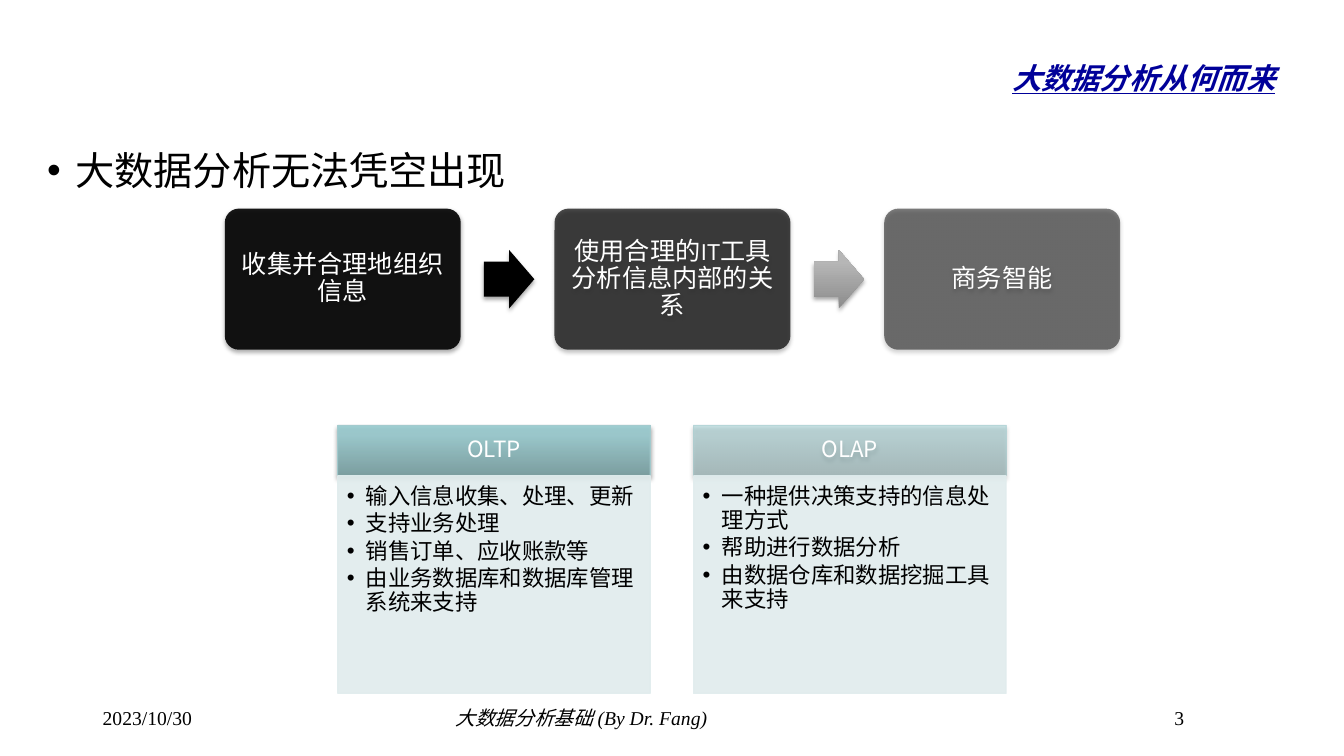
import pptx
import pptx.util
import pptx.dml.color
import pptx.enum.shapes
import pptx.enum.text
import pptx.oxml
import pptx.oxml.ns

Inches, Pt = pptx.util.Inches, pptx.util.Pt
RGB = pptx.dml.color.RGBColor
KIND = pptx.enum.shapes.MSO_SHAPE
ALIGN = pptx.enum.text.PP_ALIGN
ANCHOR = pptx.enum.text.MSO_ANCHOR
qn = pptx.oxml.ns.qn
NS = pptx.oxml.ns.nsdecls("a")

BLACK = RGB(0, 0, 0)
WHITE = RGB(255, 255, 255)
NAVY = RGB(0, 0, 0x99)
EDGE = RGB(0xA4, 0xCB, 0xCE)
PALE = RGB(0xE0, 0xEC, 0xED)
TEAL = [(0, "769C9E"), (80, "99CACE"), (100, "98CCD0")]
GRAY = [(0, "8C8C8C"), (80, "B6B6B6"), (100, "B7B7B7")]


class Page:
    """Holds the fonts and the slide being built."""
    serif, sans, label = "Times New Roman", "Noto Sans CJK SC", "Karla"

    def __init__(self, deck):
        self.slide = deck.slides.add_slide(deck.slide_layouts[5])

    def place(self, shape, box):
        shape.left, shape.top, shape.width, shape.height = map(Inches, box)

    def run(self, para, text, size, font, color, italic=False):
        run = para.add_run()
        run.text = text
        run.font.size, run.font.name = Pt(size), font
        run.font.color.rgb = color
        run.font.italic = italic
        east = pptx.oxml.parse_xml(f'<a:ea {NS} typeface="{self.sans}"/>')
        run.font._element.find(qn("a:latin")).addnext(east)
        return run

    def bullet(self, para, indent):
        props = para._p.get_or_add_pPr()
        props.set("marL", str(Inches(indent)))
        props.set("indent", str(-Inches(indent)))
        props.append(pptx.oxml.parse_xml(f'<a:buFont {NS} typeface="Arial"/>'))
        props.append(pptx.oxml.parse_xml(f'<a:buChar {NS} char="•"/>'))

    def inset(self, frame, left, top, right, bottom):
        frame.margin_left, frame.margin_top = Inches(left), Inches(top)
        frame.margin_right, frame.margin_bottom = Inches(right), Inches(bottom)

    def title(self, text, box):
        shape = self.slide.shapes.title
        self.place(shape, box)
        frame = shape.text_frame
        frame.vertical_anchor = ANCHOR.MIDDLE
        para = frame.paragraphs[0]
        para.alignment = ALIGN.RIGHT
        font = self.run(para, text, 36, self.serif, NAVY, True).font
        font.bold = font.underline = True
        font._element.set("baseline", "-25000")

    def text(self, text, box, size, italic=False, bullet=False):
        frame = self.slide.shapes.add_textbox(*map(Inches, box)).text_frame
        frame.word_wrap = True
        para = frame.paragraphs[0]
        if bullet:
            self.bullet(para, 0.28)
            para.line_spacing = 1.2
        self.run(para, text, size, self.serif, BLACK, italic)

    def fade(self, fill, alpha):
        for color in fill.iter(qn("a:srgbClr")):
            color.append(pptx.oxml.parse_xml(
                f'<a:alpha {NS} val="{alpha * 1000}"/>'))

    def shape(self, kind, box, fill, alpha=100, line=None, shadow=True):
        shape = self.slide.shapes.add_shape(kind, *map(Inches, box))
        if isinstance(fill, list):
            shape.fill.gradient()
            shape.fill.gradient_angle = 90
            stops = shape._element.spPr.find(".//" + qn("a:gsLst"))
            for stop in list(stops):
                stops.remove(stop)
            for pos, color in fill:
                stops.append(pptx.oxml.parse_xml(
                    f'<a:gs {NS} pos="{pos * 1000}">'
                    f'<a:srgbClr val="{color}"/></a:gs>'))
        else:
            shape.fill.solid()
            shape.fill.fore_color.rgb = fill
        if line is None:
            shape.line.fill.background()
        else:
            shape.line.color.rgb = line
            shape.line.width = Pt(0.75)
        if alpha < 100:
            self.fade(shape._element.spPr, alpha)
        shape.shadow.inherit = False
        if shadow:
            shape._element.spPr.find(qn("a:effectLst")).append(
                pptx.oxml.parse_xml(
                    f'<a:outerShdw {NS} blurRad="{Pt(3.1)}" dist="{Pt(1.8)}" '
                    'dir="5400000" rotWithShape="0"><a:srgbClr val="000000">'
                    '<a:alpha val="35000"/></a:srgbClr></a:outerShdw>'))
        shape.text_frame.word_wrap = True
        return shape

    def caption(self, shape, text, size, font, inset):
        frame = shape.text_frame
        frame.vertical_anchor = ANCHOR.MIDDLE
        self.inset(frame, *inset)
        para = frame.paragraphs[0]
        para.alignment, para.line_spacing = ALIGN.CENTER, 0.9
        self.run(para, text, size, font, WHITE)

    def step(self, left, text, alpha):
        box = self.shape(KIND.ROUNDED_RECTANGLE, (left, 2.07, 2.34, 1.4),
                         BLACK, alpha)
        box.adjustments[0] = 0.1
        self.caption(box, text, 18, self.label, [0.07] * 4)

    def arrow(self, left, fill):
        arrow = self.shape(KIND.RIGHT_ARROW, (left, 2.48, 0.5, 0.58), fill)
        arrow.adjustments[0], arrow.adjustments[1] = 0.6, 0.5

    def panel(self, left, head, items, alpha):
        top = self.shape(KIND.RECTANGLE, (left, 4.22, 3.1, 0.5),
                         TEAL, alpha, EDGE)
        self.caption(top, head, 16, self.sans, (0.12, 0.07, 0.12, 0.07))
        body = self.shape(KIND.RECTANGLE, (left, 4.72, 3.1, 2.16),
                          PALE, 90, PALE, shadow=False)
        frame = body.text_frame
        frame.vertical_anchor = ANCHOR.TOP
        self.inset(frame, 0.09, 0.09, 0.12, 0.14)
        for i, item in enumerate(items):
            para = frame.add_paragraph() if i else frame.paragraphs[0]
            self.bullet(para, 0.19)
            para.alignment, para.line_spacing = ALIGN.LEFT, 0.9
            para.space_after = Pt(2.4)
            self.run(para, item, 16, self.sans, BLACK)


def main():
    deck = pptx.Presentation()
    deck.slide_width, deck.slide_height = Inches(13.33), Inches(7.5)
    page = Page(deck)

    # Title and lead line
    page.title("大数据分析从何而来", (1.94, 0.05, 10.81, 1.1))
    page.text("大数据分析无法凭空出现", (0.37, 1.31, 12.6, 0.7), 28, bullet=True)

    # Footer
    page.text("3", (11.55, 6.95, 0.87, 0.4), 14)
    page.text("大数据分析基础 (By Dr. Fang)", (4.42, 6.95, 6.42, 0.4), 14,
              italic=True)
    page.text("2023/10/30", (0.92, 6.95, 3, 0.4), 14)

    # Comparison panels
    panels = [
        ("OLTP", 90, ["输入信息收集、处理、更新", "支持业务处理",
                      "销售订单、应收账款等", "由业务数据库和数据库管理系统来支持"]),
        ("OLAP", 50, ["一种提供决策支持的信息处理方式", "帮助进行数据分析",
                      "由数据仓库和数据挖掘工具来支持"]),
    ]
    for i, (head, alpha, items) in enumerate(panels):
        page.panel(3.35 + 3.53 * i, head, items, alpha)

    # Process steps
    pitch = 3.27
    steps = [("收集并合理地组织信息", 90),
             ("使用合理的IT工具分析信息内部的关系", 70), ("商务智能", 50)]
    for i, (text, alpha) in enumerate(steps):
        page.step(2.23 + pitch * i, text, alpha)
    for i, fill in enumerate([BLACK, GRAY]):
        page.arrow(4.8 + pitch * i, fill)

    deck.save("out.pptx")


if __name__ == "__main__":
    main()
